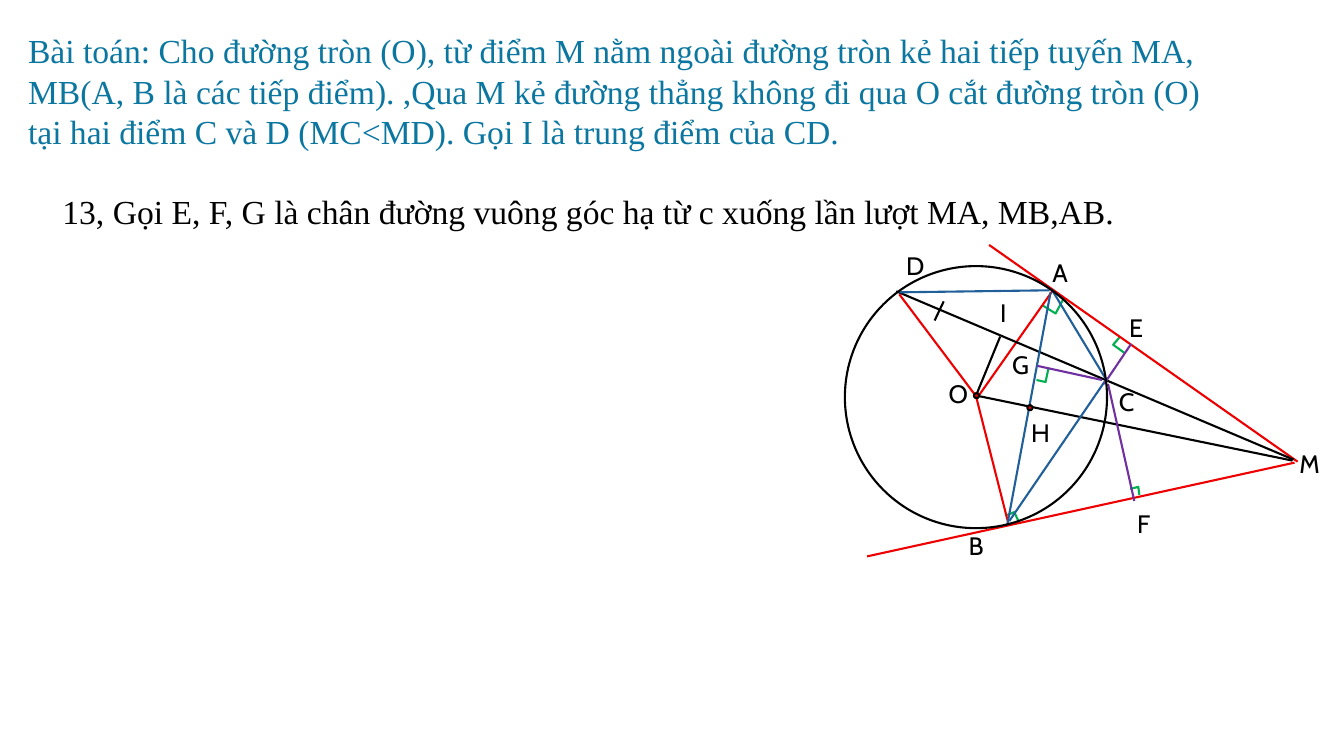
from dataclasses import dataclass

from lxml import etree
from pptx import Presentation
from pptx import util as u
from pptx.dml.color import RGBColor
from pptx.enum import shapes, text
from pptx.oxml import ns

CELL = u.Inches(0.1)  # one column wide, one row high
COLORS = {
    "ink": "000000",
    "red": "EE0000",
    "blue": "215F9A",
    "purple": "7030A0",
    "green": "00B050",
    "teal": "0B76A0",
}
LINE_WIDTH = u.Pt(1.5)
LABEL_WIDTH, LABEL_HEIGHT = 3.7, 4.0
DOT_SIZE = 0.5

Point = tuple[float, float]


@dataclass
class Segment:
    start: Point
    end: Point
    color: str


@dataclass
class Disc:
    corner: Point
    size: float
    fill: str | None = None


@dataclass
class Words:
    content: str
    corner: Point
    width: float = LABEL_WIDTH
    height: float = LABEL_HEIGHT
    font: str = "Cabin"
    size: int = 18
    color: str = "ink"


RIGHT_ANGLES: list[list[Point]] = [
    [(99.9, 51.1), (100.6, 50.8), (101.1, 51.9)],
    [(103.4, 30.3), (104.7, 31.1), (105.5, 29.6)],
    [(112.1, 48.5), (112.9, 48.3), (113.0, 49.1)],
    [(111.1, 33.4), (110.4, 34.2), (111.5, 35.0)],
    [(102.8, 37.7), (103.7, 37.9), (104.0, 36.5)],
]

SEGMENTS = [
    Segment((96.9, 39.5), (104.5, 28.7), "red"),
    Segment((86.0, 55.2), (128.4, 45.9), "red"),
    Segment((96.8, 39.3), (100.0, 51.9), "red"),
    Segment((98.1, 24.3), (128.7, 45.8), "red"),
    Segment((88.9, 28.9), (128.3, 45.6), "ink"),
    Segment((93.6, 29.9), (92.7, 31.8), "ink"),
    Segment((99.2, 33.4), (96.7, 39.5), "ink"),
    Segment((97.1, 39.3), (128.2, 45.7), "ink"),
    Segment((89.2, 29.0), (104.1, 28.8), "blue"),
    Segment((104.3, 28.7), (109.8, 37.8), "blue"),
    Segment((100.1, 51.7), (109.6, 37.8), "blue"),
    Segment((99.9, 52.1), (104.2, 29.0), "blue"),
    Segment((96.8, 39.3), (89.2, 29.2), "red"),
    Segment((112.2, 34.1), (109.5, 38.1), "purple"),
    Segment((109.9, 38.1), (112.5, 49.7), "purple"),
    Segment((109.3, 37.7), (102.9, 36.3), "purple"),
]

DISCS = [
    Disc((83.8, 26.4), 26.0),
    Disc((96.6, 39.0), DOT_SIZE, "red"),
    Disc((101.9, 40.2), DOT_SIZE, "red"),
]

LABELS = [
    Words("O", (93.1, 37.0)),
    Words("A", (103.4, 25.0)),
    Words("B", (95.1, 52.1)),
    Words("M", (127.9, 44.0)),
    Words("C", (110.0, 37.8)),
    Words("D", (88.9, 24.3)),
    Words("I", (98.2, 29.0)),
    Words("H", (101.3, 40.9)),
    Words("E", (111.0, 30.5)),
    Words("F", (111.8, 49.9)),
    Words("G", (99.4, 34.2)),
]

STATEMENTS = [
    Words(
        "Bài toán: Cho đường tròn (O), từ điểm M nằm ngoài đường tròn kẻ hai tiếp tuyến MA, "
        "MB(A, B là các tiếp điểm). ,Qua M kẻ đường thẳng không đi qua O cắt đường tròn (O) "
        "tại hai điểm C và D (MC<MD). Gọi I là trung điểm của CD.",
        (1.8, 2.5), 121.1, 13.1, "Times New Roman", 24, "teal",
    ),
    Words(
        "13, Gọi E, F, G là chân đường vuông góc hạ từ c xuống lần lượt MA, MB,AB.",
        (5.2, 18.4), 107.5, 5.0, "Times New Roman", 24,
    ),
]


def grid(cells: float) -> u.Emu:
    return u.Emu(round(cells * CELL))


def grid_point(point: Point) -> tuple[u.Emu, u.Emu]:
    return grid(point[0]), grid(point[1])


def rgb(name: str) -> RGBColor:
    return RGBColor.from_string(COLORS[name])


def style_line(shape, color: str) -> None:
    shape.line.color.rgb = rgb(color)
    shape.line.width = LINE_WIDTH


def draw_right_angle(slide, points: list[Point]) -> None:
    start, *others = map(grid_point, points)
    builder = slide.shapes.build_freeform(*start)
    builder.add_line_segments(others, close=False)
    shape = builder.convert_to_shape()
    shape.shadow.inherit = False
    shape.fill.background()
    style_line(shape, "green")


def draw_segment(slide, segment: Segment) -> None:
    connector = slide.shapes.add_connector(
        shapes.MSO_CONNECTOR.STRAIGHT, *grid_point(segment.start), *grid_point(segment.end)
    )
    style_line(connector, segment.color)
    etree.SubElement(connector._element.spPr, ns.qn("a:effectLst"))


def draw_disc(slide, disc: Disc) -> None:
    size = grid(disc.size)
    shape = slide.shapes.add_shape(
        shapes.MSO_SHAPE.OVAL, *grid_point(disc.corner), size, size
    )
    shape.shadow.inherit = False
    if disc.fill:
        shape.fill.solid()
        shape.fill.fore_color.rgb = rgb(disc.fill)
    else:
        shape.fill.background()
    style_line(shape, "ink")


def write(slide, words: Words) -> None:
    box = slide.shapes.add_textbox(
        *grid_point(words.corner), grid(words.width), grid(words.height)
    )
    frame = box.text_frame
    frame.word_wrap = True
    frame.auto_size = text.MSO_AUTO_SIZE.SHAPE_TO_FIT_TEXT
    paragraph = frame.paragraphs[0]
    paragraph.text = words.content
    paragraph.font.name = words.font
    paragraph.font.size = u.Pt(words.size)
    paragraph.font.color.rgb = rgb(words.color)


def main() -> None:
    presentation = Presentation()
    presentation.slide_width = u.Inches(13.33)
    presentation.slide_height = u.Inches(7.5)
    slide = presentation.slides.add_slide(presentation.slide_layouts[6])
    for points in RIGHT_ANGLES:
        draw_right_angle(slide, points)
    for segment in SEGMENTS:
        draw_segment(slide, segment)
    for disc in DISCS:
        draw_disc(slide, disc)
    for words in LABELS + STATEMENTS:
        write(slide, words)
    presentation.save("out.pptx")


if __name__ == "__main__":
    main()
